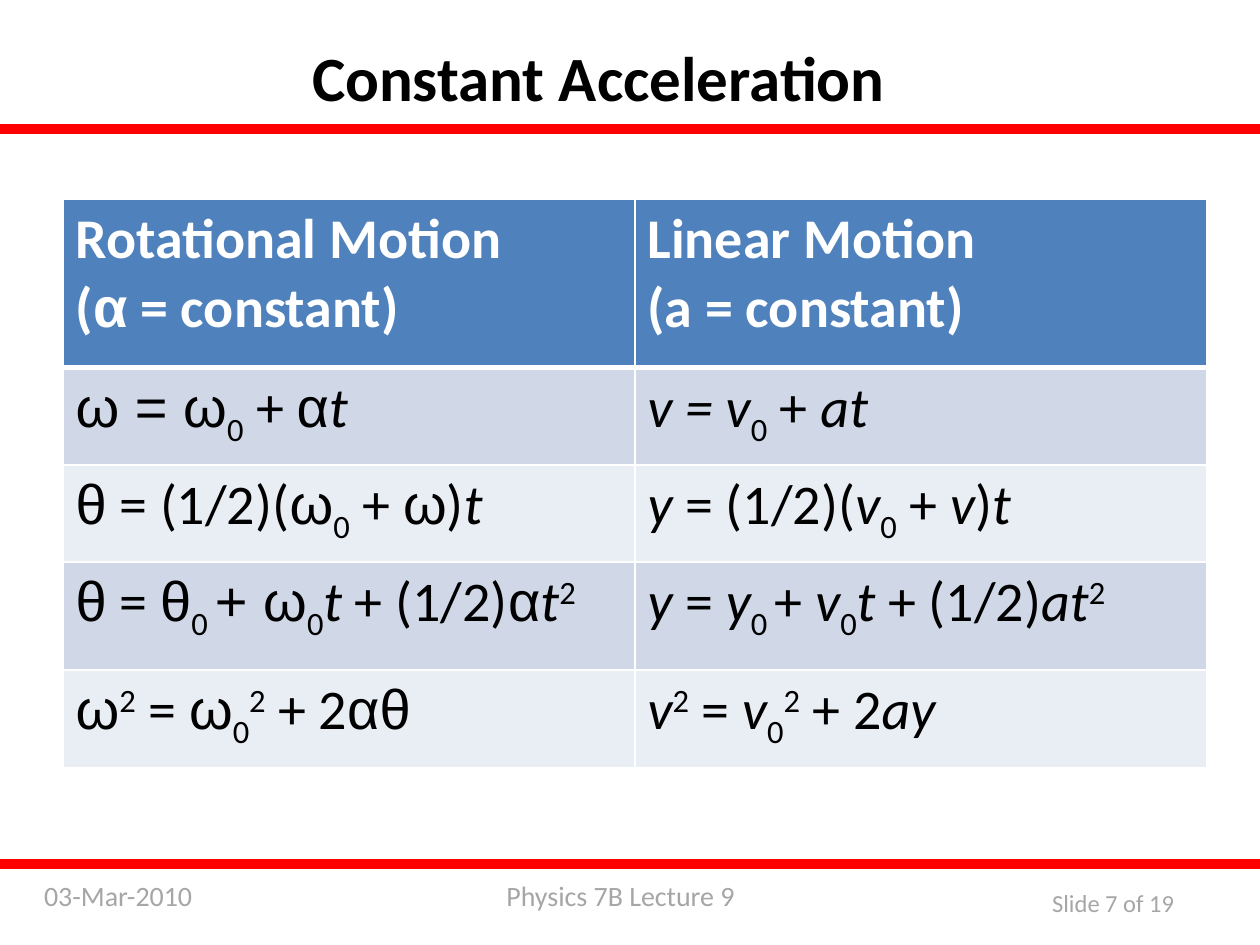
import pptx
import pptx.util
import pptx.dml.color
import pptx.enum.shapes
import pptx.enum.text
import pptx.oxml
import pptx.oxml.ns

Cm, Pt = pptx.util.Cm, pptx.util.Pt
RGBColor = pptx.dml.color.RGBColor
ALIGN = pptx.enum.text.PP_ALIGN
ANCHOR = pptx.enum.text.MSO_ANCHOR

COLORS = {
    "text": "000000",
    "footer": "A6A6A6",
    "bar": "FF0000",
    "header": "4F81BD",
    "band_dark": "D0D8E8",
    "band_light": "E9EDF4",
    "white": "FFFFFF",
}

# Run styles: "g" Greek font, "i" italic, "_" subscript, "^" superscript
BASELINES = {"_": "-25000", "^": "30000"}

# Each cell is a list of paragraphs, each paragraph a list of (text, style)
HEADER = [
    [[("Rotational Motion", "")], [("(", ""), ("α", "g"), (" = constant)", "")]],
    [[("Linear Motion", "")], [("(a = constant)", "")]],
]
EQUATIONS = [
    [
        [[("ω = ω", "g"), ("0", "_"), (" + ", ""), ("α", "g"), ("t", "i")]],
        [[("v = v", "i"), ("0", "_"), (" + ", ""), ("at", "i")]],
    ],
    [
        [[("θ", "g"), (" = (1/2)(", ""), ("ω", "g"), ("0", "_"), (" + ", ""),
          ("ω", "g"), (")", ""), ("t", "i")]],
        [[("y ", "i"), ("= (1/2)(", ""), ("v", "i"), ("0", "_"), (" + ", ""),
          ("v", "i"), (")", ""), ("t", "i")]],
    ],
    [
        [[("θ", "g"), (" = ", ""), ("θ", "g"), ("0 ", "_"), ("+ ω", "g"), ("0", "_"),
          ("t", "i"), (" + (1/2)", ""), ("α", "g"), ("t", "i"), ("2", "^")]],
        [[("y ", "i"), ("= ", ""), ("y", "i"), ("0 ", "_"), ("+ ", ""), ("v", "i"),
          ("0", "_"), ("t ", "i"), ("+ (1/2)", ""), ("at", "i"), ("2", "^")]],
    ],
    [
        [[("ω", "g"), ("2", "^"), (" = ", ""), ("ω", "g"), ("0", "_"), ("2", "^"),
          (" + 2", ""), ("αθ", "g")]],
        [[("v", "i"), ("2", "^"), (" = ", ""), ("v", "i"), ("0", "_"), ("2", "^"),
          (" + 2", ""), ("ay", "i")]],
    ],
]


class SlideBuilder:
    font = "Calibri"
    greek_font = "Arial"

    def __init__(self, slide):
        self.slide = slide

    def color(self, name):
        return RGBColor.from_string(COLORS[name])

    def run(self, paragraph, text, size, color, bold=False, style=""):
        run = paragraph.add_run()
        run.text = text
        run.font.name = self.greek_font if style == "g" else self.font
        run.font.size = Pt(size)
        run.font.bold = bold
        run.font.italic = style == "i"
        run.font.color.rgb = self.color(color)
        if style in BASELINES:
            run.font._element.set("baseline", BASELINES[style])

    def title(self, text, left, top, width, height):
        title = self.slide.shapes.title
        title.left, title.top = Cm(left), Cm(top)
        title.width, title.height = Cm(width), Cm(height)
        frame = title.text_frame
        frame.word_wrap = False
        frame.vertical_anchor = ANCHOR.TOP
        frame.paragraphs[0].alignment = ALIGN.CENTER
        self.run(frame.paragraphs[0], text, 36, "text", bold=True)

    def footer(self, text, left, top, width, height, size, wrap=False):
        box = self.slide.shapes.add_textbox(Cm(left), Cm(top), Cm(width), Cm(height))
        box.text_frame.word_wrap = wrap
        self.run(box.text_frame.paragraphs[0], text, size, "footer")

    def bar(self, top):
        bar = self.slide.shapes.add_shape(
            pptx.enum.shapes.MSO_SHAPE.RECTANGLE, 0, Cm(top), Cm(25.4), Cm(0.13))
        bar.shadow.inherit = False
        bar.fill.solid()
        bar.fill.fore_color.rgb = self.color("bar")
        bar.line.color.rgb = self.color("bar")
        bar.line.width = Pt(2)

    def borders(self, cell, top, bottom):
        properties = cell._tc.get_or_add_tcPr()
        for side, width in (("L", 1), ("R", 1), ("T", top), ("B", bottom)):
            properties.append(pptx.oxml.parse_xml(
                f'<a:ln{side} {pptx.oxml.ns.nsdecls("a")} w="{Pt(width)}">'
                f'<a:solidFill><a:srgbClr val="{COLORS["white"]}"/></a:solidFill>'
                f'</a:ln{side}>'))

    def cell(self, cell, paragraphs, fill, color, bold, top, bottom):
        self.borders(cell, top, bottom)
        cell.fill.solid()
        cell.fill.fore_color.rgb = self.color(fill)
        frame = cell.text_frame
        for index, runs in enumerate(paragraphs):
            paragraph = frame.add_paragraph() if index else frame.paragraphs[0]
            for text, style in runs:
                self.run(paragraph, text, 32, color, bold, style)

    def table(self, rows, left, top, column_width, row_heights):
        columns = len(rows[0])
        table = self.slide.shapes.add_table(
            len(rows), columns, Cm(left), Cm(top),
            Cm(column_width * columns), Cm(sum(row_heights))).table
        for column in table.columns:
            column.width = Cm(column_width)
        for row_index, row in enumerate(rows):
            table.rows[row_index].height = Cm(row_heights[row_index])
            is_header = row_index == 0
            band = "band_dark" if row_index % 2 else "band_light"
            for column_index, paragraphs in enumerate(row):
                self.cell(
                    table.cell(row_index, column_index), paragraphs,
                    fill="header" if is_header else band,
                    color="white" if is_header else "text",
                    bold=is_header,
                    top=3 if row_index == 1 else 1,
                    bottom=3 if is_header else 1)


def main():
    presentation = pptx.Presentation()
    presentation.slide_width, presentation.slide_height = Cm(25.4), Cm(19.05)
    slide = presentation.slides.add_slide(presentation.slide_layouts[5])
    builder = SlideBuilder(slide)

    # Footer
    builder.footer("Physics 7B Lecture 9", 9.96, 17.58, 5.18, 0.94, 16)
    builder.footer("03-Mar-2010", 0.64, 17.58, 4.24, 0.94, 16, wrap=True)
    builder.footer("Slide 7 of 19", 20.96, 17.78, 3.33, 0.86, 14)

    # Red bars
    for top in (2.54, 17.35):
        builder.bar(top)

    # Title and equations
    builder.title("Constant Acceleration", 5.97, 0.64, 12.19, 1.8)
    builder.table([HEADER] + EQUATIONS, 1.27, 4.01, 11.53,
                  [3.4, 1.96, 1.96, 2.18, 1.96])

    presentation.save("out.pptx")


if __name__ == "__main__":
    main()
